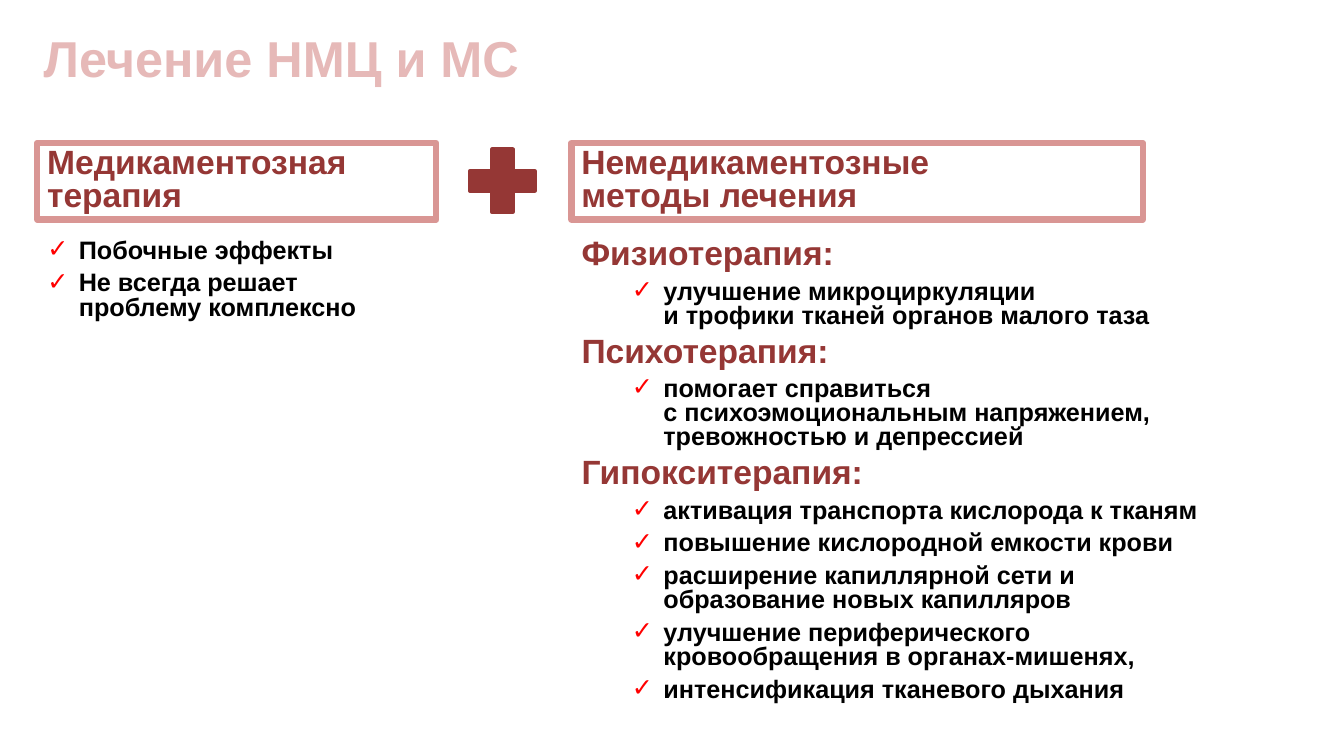
"""Build a slide on drug and non-drug treatment."""
from dataclasses import dataclass

from lxml import etree
from pptx import Presentation
from pptx.dml.color import RGBColor
from pptx.enum.shapes import MSO_SHAPE
from pptx.enum.text import MSO_ANCHOR, MSO_AUTO_SIZE, PP_ALIGN
from pptx.oxml.ns import qn
from pptx.util import Pt

RECT, PLUS = MSO_SHAPE.RECTANGLE, MSO_SHAPE.MATH_PLUS
TOP, MIDDLE = MSO_ANCHOR.TOP, MSO_ANCHOR.MIDDLE
GROW, NONE = MSO_AUTO_SIZE.SHAPE_TO_FIT_TEXT, MSO_AUTO_SIZE.NONE
LEFT = PP_ALIGN.LEFT

DARK, ROSE, PALE = "953735", "D99694", "E6B9B8"
BLACK, RED = "000000", "FF0000"
HANG = 22.5


@dataclass
class Line:
    text: str
    size: float = 24
    color: str = DARK
    check: bool = False
    level: int = 0
    after: float = 6


@dataclass
class Box:
    left: float
    top: float
    width: float
    height: float


def check(text: str, level: int = 0) -> Line:
    return Line(text, 18, BLACK, True, level)


def paint(part, color: str) -> None:
    part.solid()
    part.fore_color.rgb = RGBColor.from_string(color)


def place(shape, box: Box) -> None:
    shape.left, shape.top = Pt(box.left), Pt(box.top)
    shape.width, shape.height = Pt(box.width), Pt(box.height)


def mark(par, line: Line) -> None:
    props = par._p.get_or_add_pPr()
    indent = HANG + 36 * line.level if line.check else 0
    props.set("marL", str(Pt(indent)))
    props.set("indent", str(Pt(-HANG if line.check else 0)))
    if line.check:
        tint = etree.SubElement(props, qn("a:buClr"))
        etree.SubElement(tint, qn("a:srgbClr")).set("val", RED)
        etree.SubElement(props, qn("a:buChar")).set("char", "✓")
    else:
        etree.SubElement(props, qn("a:buNone"))


def write(shape, lines: list[Line], anchor=TOP, fit=GROW, wrap: bool = True) -> None:
    frame = shape.text_frame
    frame.word_wrap, frame.auto_size = wrap, fit
    frame.vertical_anchor = anchor
    for i, line in enumerate(lines):
        par = frame.add_paragraph() if i else frame.paragraphs[0]
        par.level, par.alignment = line.level, LEFT
        par.line_spacing = 0.8
        par.space_before, par.space_after = Pt(0), Pt(line.after)
        mark(par, line)
        for j, piece in enumerate(line.text.split("\n")):
            if j:
                par.add_line_break()
            run = par.add_run()
            run.text = piece
            font = run.font
            font.name, font.size, font.bold = "Arial", Pt(line.size), True
            paint(font.fill, line.color)


def draw(slide, kind, box: Box, edge: str, weight: float, fill: str = ""):
    shape = slide.shapes.add_shape(kind, 0, 0, 0, 0)
    place(shape, box)
    shape.shadow.inherit = False
    if fill:
        paint(shape.fill, fill)
    else:
        shape.fill.background()
    paint(shape.line.fill, edge)
    shape.line.width = Pt(weight)
    return shape


HEADS = [
    (Box(26.6, 102.2, 285.1, 54.7), "Медикаментозная\nтерапия"),
    (Box(408.2, 102.2, 408.2, 54.7), "Немедикаментозные\nметоды лечения"),
]
LISTS = [
    (Box(26.6, 167.8, 285.1, 65.5), [
        check("Побочные эффекты"),
        check("Не всегда решает проблему комплексно"),
    ]),
    (Box(408.2, 167.8, 468, 341.3), [
        Line("Физиотерапия:"),
        check("улучшение микроциркуляции\nи трофики тканей органов малого таза", 1),
        Line("Психотерапия:"),
        check("помогает справиться\nс психоэмоциональным напряжением, "
              "тревожностью и депрессией", 1),
        Line("Гипокситерапия:"),
        check("активация транспорта кислорода к тканям", 1),
        check("повышение кислородной емкости крови", 1),
        check("расширение капиллярной сети и образование новых капилляров", 1),
        check("улучшение периферического кровообращения в органах-мишенях,", 1),
        check("интенсификация тканевого дыхания", 1),
    ]),
]


def main() -> None:
    deck = Presentation()
    deck.slide_width, deck.slide_height = Pt(960), Pt(540)
    slide = deck.slides.add_slide(deck.slide_layouts[3])
    title, *bodies = slide.placeholders
    place(title, Box(24, 24, 367.2, 42.5))
    write(title, [Line("Лечение НМЦ и МС", 36, PALE, after=0)], wrap=False)
    for body, (box, lines) in zip(bodies, LISTS):
        place(body, box)
        write(body, lines)
    for box, text in HEADS:
        write(draw(slide, RECT, box, ROSE, 4.5), [Line(text)], MIDDLE, NONE)
    draw(slide, PLUS, Box(327.6, 98.6, 62.6, 61.2), DARK, 3, DARK)
    deck.save("out.pptx")


if __name__ == "__main__":
    main()
